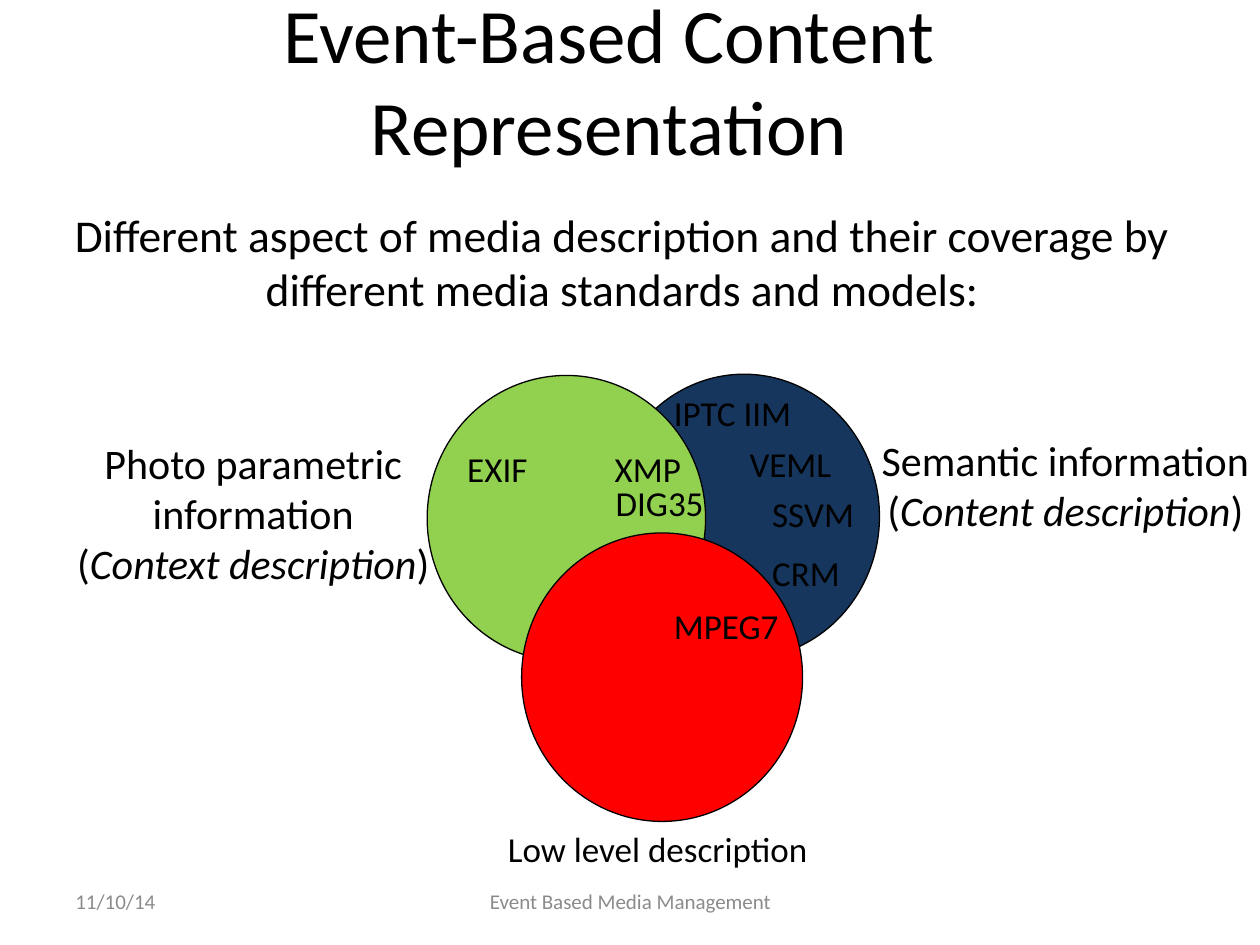
from dataclasses import dataclass

from pptx import Presentation
from pptx.dml.color import RGBColor
from pptx.enum.shapes import MSO_SHAPE as Shape
from pptx.enum.text import MSO_ANCHOR as Anchor, MSO_AUTO_SIZE as AutoSize, PP_ALIGN as Align
from pptx.util import Inches, Pt

WIDTH, HEIGHT = Inches(10), Inches(7.5)


@dataclass(frozen=True)
class Theme:
    """Colours, font and type sizes of the slide."""
    font: str = "Calibri"
    ink: str = "000000"
    muted: str = "8B8B8B"
    semantic: str = "17365D"
    context: str = "92D050"
    low_level: str = "FF0000"
    title: int = 44
    lead: int = 26
    aspect: int = 24
    standard: int = 20
    footer: int = 12
    outline: float = 0.75


THEME = Theme()

CIRCLES = [
    (THEME.semantic, (48.3, 39.6, 21.5, 30.13)),
    (THEME.context, (33.9, 39.73, 22.1, 30.27)),
    (THEME.low_level, (41.4, 56.4, 22.3, 30.53)),
]

STANDARDS = [
    ("EXIF", (36.1, 46.67, 10.1, 6.53), Align.LEFT),
    ("MPEG7", (52.5, 63.33, 14.7, 4.4), Align.LEFT),
    ("IPTC IIM", (52.5, 40.8, 15.7, 5.07), Align.LEFT),
    ("XMP", (47.8, 46.67, 9.4, 3.47), Align.JUSTIFY),
    ("DIG35", (46.2, 50.27, 12.3, 4.13), Align.CENTER),
    ("VEML", (58.5, 46.13, 10.2, 4.27), Align.LEFT),
    ("SSVM", (60.3, 51.47, 13.2, 4.93), Align.LEFT),
    ("CRM", (60.3, 57.73, 13.3, 3.73), Align.LEFT),
]

ASPECTS = [
    ("Photo parametric information\v(", "Context description", (4.1, 45.6, 32, 26)),
    ("Semantic information (", "Content description", (68.1, 45.33, 32.9, 5.2)),
]


def place(share):
    """Turn percentages of the slide into left, top, width and height."""
    left, top, width, height = share
    return (round(WIDTH * left / 100), round(HEIGHT * top / 100),
            round(WIDTH * width / 100), round(HEIGHT * height / 100))


def format_run(run, size, colour):
    """Apply the theme font with a size and a colour."""
    run.font.name = THEME.font
    run.font.size = Pt(size)
    run.font.color.rgb = RGBColor.from_string(colour)


def format_text(frame, size, colour, align, anchor):
    """Format every run of a frame and set its layout."""
    frame.word_wrap = True
    frame.auto_size = AutoSize.NONE
    frame.vertical_anchor = anchor
    for paragraph in frame.paragraphs:
        paragraph.alignment = align
        for run in paragraph.runs:
            format_run(run, size, colour)


def add_title(slide, text, share):
    """Fill and move the title placeholder."""
    title = slide.shapes.title
    title.left, title.top, title.width, title.height = place(share)
    title.text_frame.text = text
    format_text(title.text_frame, THEME.title, THEME.ink, Align.CENTER, Anchor.MIDDLE)


def add_label(slide, text, share, size, align=Align.CENTER, colour=THEME.ink, anchor=Anchor.TOP):
    """Add a wrapped text label and return its frame."""
    frame = slide.shapes.add_textbox(*place(share)).text_frame
    frame.text = text
    format_text(frame, size, colour, align, anchor)
    return frame


def add_aspect(slide, lead, kind, share):
    """Add an aspect name with its italic kind in brackets."""
    paragraph = add_label(slide, lead, share, THEME.aspect).paragraphs[0]
    for text, italic in ((kind, True), (")", False)):
        run = paragraph.add_run()
        run.text = text
        format_run(run, THEME.aspect, THEME.ink)
        run.font.italic = italic


def add_circle(slide, colour, share):
    """Add one outlined circle of the Venn diagram."""
    circle = slide.shapes.add_shape(Shape.OVAL, *place(share))
    circle.shadow.inherit = False
    circle.fill.solid()
    circle.fill.fore_color.rgb = RGBColor.from_string(colour)
    circle.line.color.rgb = RGBColor.from_string(THEME.ink)
    circle.line.width = Pt(THEME.outline)


def main():
    """Build and save the slide."""
    deck = Presentation()
    deck.slide_width, deck.slide_height = WIDTH, HEIGHT
    slide = deck.slides.add_slide(deck.slide_layouts[5])

    add_title(slide, "Event-Based Content Representation", (2.1, 0, 92.5, 16.67))
    add_label(slide, "Different aspect of media description and their coverage by "
              "different media standards and models:", (4.4, 21.2, 90, 66), THEME.lead)
    add_label(slide, "11/10/14", (5, 92.67, 23.3, 5.33), THEME.footer,
              Align.LEFT, THEME.muted, Anchor.MIDDLE)
    add_label(slide, "Event Based Media Management", (34.2, 92.67, 31.7, 5.33), THEME.footer,
              Align.CENTER, THEME.muted, Anchor.MIDDLE)

    for colour, share in CIRCLES:
        add_circle(slide, colour, share)
    for name, share, align in STANDARDS:
        add_label(slide, name, share, THEME.standard, align)
    for lead, kind, share in ASPECTS:
        add_aspect(slide, lead, kind, share)
    add_label(slide, "Low level description", (34.7, 86.93, 35, 5.07), THEME.standard)

    deck.save("out.pptx")


if __name__ == "__main__":
    main()
